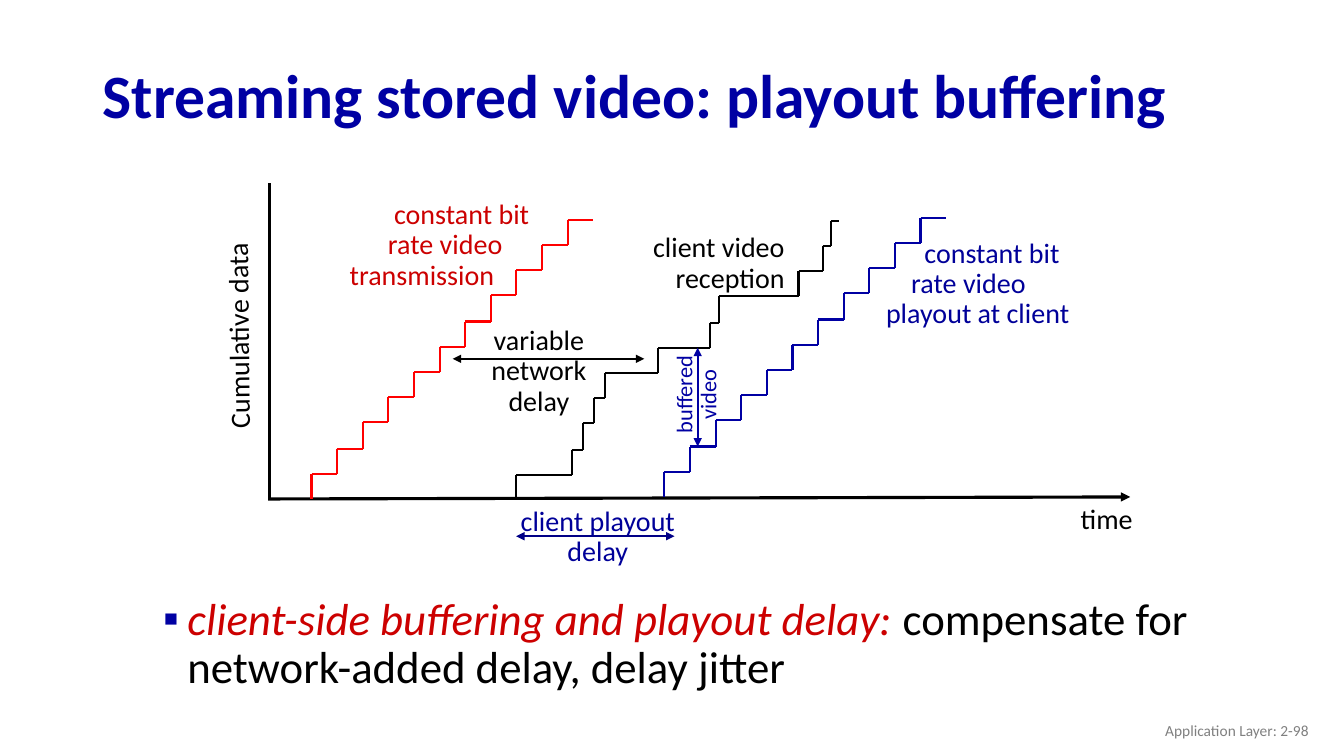
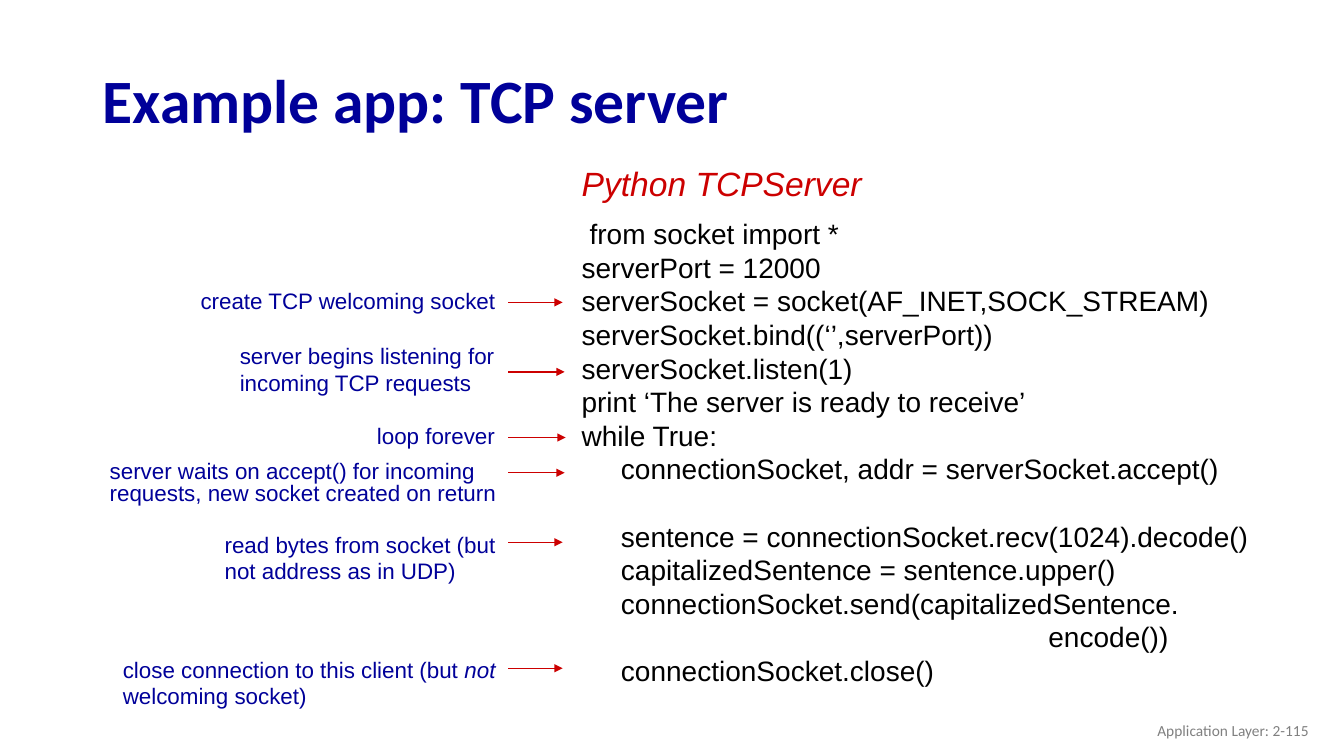
import dataclasses

import lxml.etree
import pptx
import pptx.dml.color
import pptx.enum.shapes
import pptx.enum.text
import pptx.oxml.ns
import pptx.util


@dataclasses.dataclass(frozen=True)
class Theme:
    sans: str = "Calibri"
    code: str = "Arial"
    navy: str = "0000A3"
    blue: str = "000099"
    deep: str = "010086"
    crimson: str = "CC0000"
    red: str = "FF0000"
    black: str = "000000"
    gray: str = "808080"
    title: int = 44
    body: int = 32
    head: int = 24
    text: int = 20
    note: int = 16
    foot: int = 11


theme = Theme()
px = 9144
align = pptx.enum.text.PP_ALIGN
middle = pptx.enum.text.MSO_ANCHOR.MIDDLE
qn = pptx.oxml.ns.qn


def write(slide, box, lines, size, font=theme.sans, side=align.LEFT, space=0.9,
          bold=False, anchor=pptx.enum.text.MSO_ANCHOR.TOP):
    shape = slide.shapes.add_textbox(*(n * px for n in box))
    frame = shape.text_frame
    frame.word_wrap = True
    frame.vertical_anchor = anchor
    for row, (inset, before, runs) in enumerate(lines):
        para = frame.paragraphs[0] if row == 0 else frame.add_paragraph()
        para.alignment = side
        para.line_spacing = space
        para.space_before = pptx.util.Pt(before)
        para._p.get_or_add_pPr().set("marL", str(inset * px))
        for text, color, slant in runs:
            run = para.add_run()
            run.text = text
            run.font.name = font
            run.font.size = pptx.util.Pt(size)
            run.font.bold = bold
            run.font.italic = slant
            run.font.color.rgb = pptx.dml.color.RGBColor.from_string(color)
    return shape


def draw(slide, ends, color, width, tips=()):
    line = slide.shapes.add_connector(
        pptx.enum.shapes.MSO_CONNECTOR.STRAIGHT, *(n * px for n in ends))
    line.line.color.rgb = pptx.dml.color.RGBColor.from_string(color)
    line.line.width = pptx.util.Pt(width)
    for tip in tips:
        lxml.etree.SubElement(line.line._get_or_add_ln(), qn("a:" + tip), type="triangle")
    lxml.etree.SubElement(line._element.spPr, qn("a:effectLst"))


deck = pptx.Presentation()
deck.slide_width = 1333 * px
deck.slide_height = 750 * px

slides = []
for title, color, space, page in [
    ("Streaming stored video: playout buffering", theme.navy, 0.9, 98),
    ("Example app: TCP server", theme.blue, 1.0, 115),
]:
    slide = deck.slides.add_slide(deck.slide_layouts[6])
    write(slide, (92, 49, 1150, 98), [(0, 0, [(title, color, False)])],
          theme.title, space=space, bold=True, anchor=middle)
    write(slide, (1008, 705, 300, 40),
          [(0, 0, [(f"Application Layer: 2-{page}", theme.gray, False)])],
          theme.foot, side=align.RIGHT, space=1.0, anchor=middle)
    slides.append(slide)
chart, server = slides

draw(chart, (267, 182, 267, 494), theme.black, 2.25)
draw(chart, (266, 495, 1121, 493), theme.black, 2.25, ["tailEnd"])

count = 11
rise = 25.2
run = 25.4
stairs = [
    (theme.red, 495, [round(309 + run * k) for k in range(count + 1)]),
    (theme.black, 496, [512, 567, 578, 589, 600, 653, 704, 713, 792, 816, 824, 832]),
    (theme.navy, 493, [round(659 + run * k) for k in range(count + 1)]),
]
for color, base, edges in stairs:
    for k in range(count):
        low, high = (round(base - rise * n) for n in (k, k + 1))
        draw(chart, (edges[k], low, edges[k], high), color, 1.5)
        draw(chart, (edges[k], high, edges[k + 1], high), color, 1.5)

for ends, color in [
    ((449, 356, 639, 356), theme.black),
    ((512, 532, 669, 532), theme.deep),
    ((692, 443, 692, 345), theme.navy),
]:
    draw(chart, ends, color, 1.5, ["headEnd", "tailEnd"])

labels = [
    ((337, 194, 206, 101), theme.crimson, align.LEFT, theme.text, 0,
     [(44, "constant bit"), (38, "rate video"), (0, "transmission")]),
    ((131, 308, 214, 40), theme.black, align.LEFT, theme.text, 269.4,
     [(0, "Cumulative data")]),
    ((1062, 496, 100, 40), theme.black, align.LEFT, theme.text, 0, [(0, "time")]),
    ((477, 319, 115, 101), theme.black, align.CENTER, theme.text, 0,
     [(0, "variable"), (0, "network"), (0, "delay")]),
    ((620, 227, 168, 71), theme.black, align.RIGHT, theme.text, 0,
     [(0, "client video"), (0, "reception")]),
    ((863, 232, 230, 101), theme.blue, align.LEFT, theme.text, 0,
     [(44, "constant bit"), (31, "rate video"), (6, "playout at client")]),
    ((501, 498, 184, 71), theme.blue, align.CENTER, theme.text, 0,
     [(0, "client playout"), (0, "delay")]),
    ((632, 362, 120, 59), theme.navy, align.CENTER, theme.note, 270,
     [(0, "buffered"), (0, "video")]),
]
for box, color, side, size, turn, lines in labels:
    rows = [(inset, 0, [(text, color, False)]) for inset, text in lines]
    write(chart, box, rows, size, side=side).rotation = turn

point = write(chart, (137, 587, 1150, 97), [(39, 10, [
    ("client-side buffering and playout delay: ", theme.crimson, True),
    ("compensate for network-added delay, delay jitter", theme.black, False),
])], theme.body)
props = point.text_frame.paragraphs[0]._p.get_or_add_pPr()
props.set("indent", str(-24 * px))
tint = lxml.etree.SubElement(props, qn("a:buClr"))
lxml.etree.SubElement(tint, qn("a:srgbClr"), val=theme.navy)
lxml.etree.SubElement(props, qn("a:buFont"), typeface=theme.code)
lxml.etree.SubElement(props, qn("a:buChar"), char="▪")

pitch = 24
code = [
    (8, 0, "from socket import *"),
    (0, 0, "serverPort = 12000"),
    (0, 0, "serverSocket = socket(AF_INET,SOCK_STREAM)"),
    (0, 0, "serverSocket.bind((‘’,serverPort))"),
    (0, 0, "serverSocket.listen(1)"),
    (0, 0, "print ‘The server is ready to receive’"),
    (0, 0, "while True:"),
    (39, 0, "connectionSocket, addr = serverSocket.accept()"),
    (39, pitch, "sentence = connectionSocket.recv(1024).decode()"),
    (39, 0, "capitalizedSentence = sentence.upper()"),
    (39, 0, "connectionSocket.send(capitalizedSentence."),
    (463, 0, "encode())"),
    (39, 0, "connectionSocket.close()"),
]
rows = [(inset, gap, [(text, theme.black, False)]) for inset, gap, text in code]
write(server, (567, 210, 720, 480), rows, theme.text, theme.code,
      space=pptx.util.Pt(pitch))
write(server, (567, 157, 309, 51),
      [(0, 0, [("Python TCPServer", theme.crimson, True)])],
      theme.head, theme.code, space=1.0)

notes = [
    ((189, 280, 335, 37), 19, 300, 558, [("create TCP welcoming socket", False)]),
    ((228, 335, 314, 64), 19, 369, 560,
     [("server begins listening for incoming TCP requests", False)]),
    ((364, 418, 203, 33), 16, 434, 561, [("loop forever", False)]),
    ((99, 453, 430, 55), 16, 469, 560,
     [("server waits on accept() for incoming requests, "
       "new socket created on return", False)]),
    ((213, 522, 300, 64), 19, 538, 558,
     [("read bytes from socket (but not address as in UDP)", False)]),
    ((112, 646, 427, 64), 19, 663, 558,
     [("close connection to this client (but ", False), ("not", True),
      (" welcoming socket)", False)]),
]
for box, lead, y, end, parts in notes:
    runs = [(text, theme.blue, slant) for text, slant in parts]
    write(server, box, [(0, 0, runs)], theme.note, theme.code,
          space=pptx.util.Pt(lead))
    draw(server, (504, y, end, y), theme.crimson, 1, ["tailEnd"])

deck.save("out.pptx")
